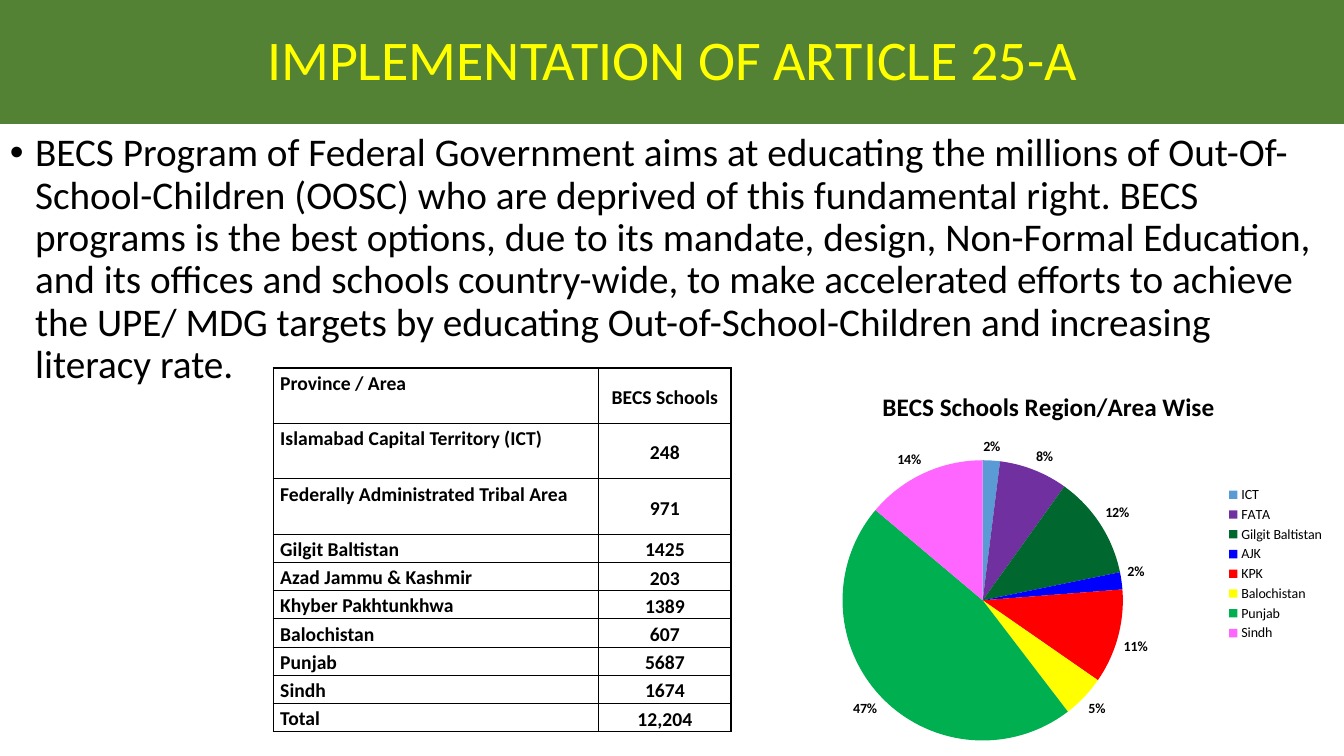
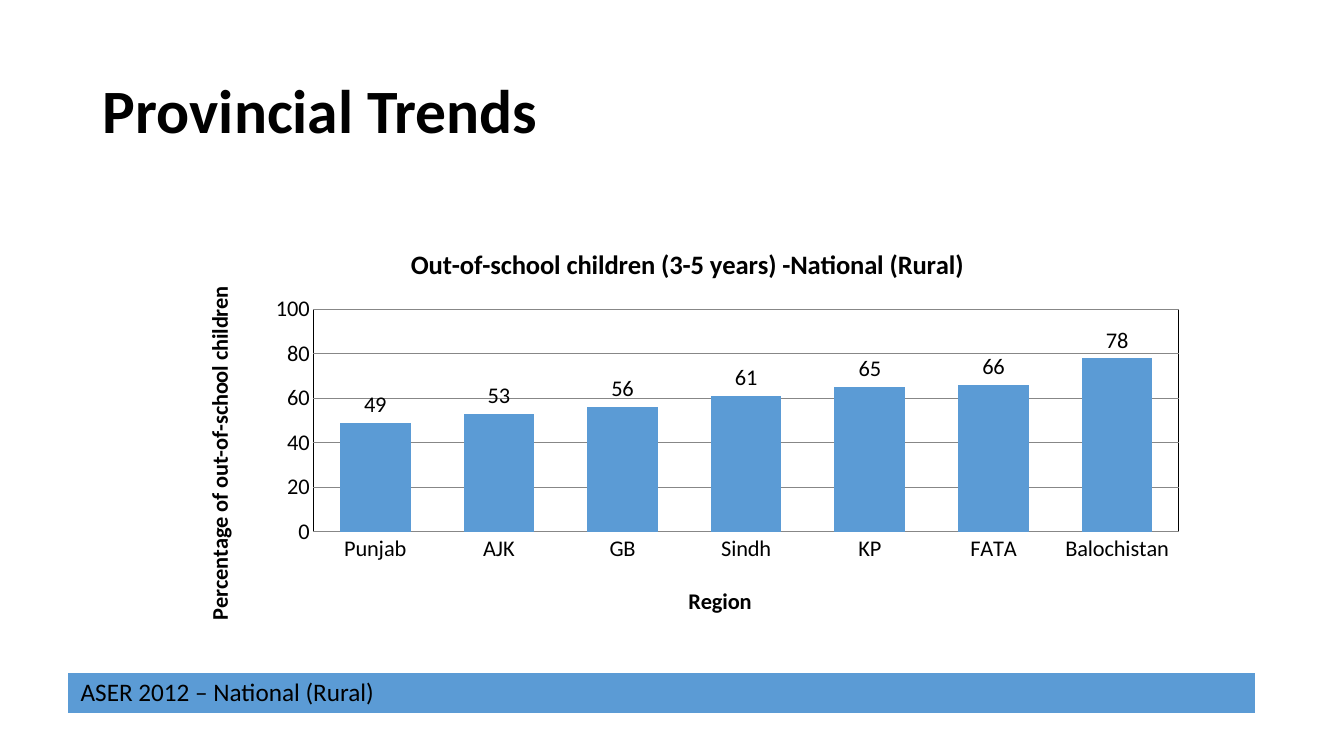
import pptx
import pptx.util
import pptx.chart.data
import pptx.dml.color
import pptx.enum.chart
import pptx.enum.text
import pptx.oxml
import pptx.oxml.ns

PX = 9144  # 100 px to the inch
FONT = "Calibri"
BLACK, BLUE, GREEN, YELLOW, GRAY = "000000", "5B9BD5", "548235", "FFFF00", "878787"
NS = pptx.oxml.ns.nsdecls
QN = pptx.oxml.ns.qn
CHART = pptx.enum.chart
MID = pptx.enum.text.MSO_ANCHOR.MIDDLE
LEFT, MIDST = pptx.enum.text.PP_ALIGN.LEFT, pptx.enum.text.PP_ALIGN.CENTER


def hue(code):
    return pptx.dml.color.RGBColor.from_string(code)


def style(para, size, code=BLACK, bold=False):
    for run in para.runs:
        run.font.name = FONT
        run.font.size = pptx.util.Pt(size)
        run.font.bold = bold
        run.font.color.rgb = hue(code)


deck = pptx.Presentation()
deck.slide_width, deck.slide_height = 1333 * PX, 750 * PX

# Slides and titles
heads = [
    ("IMPLEMENTATION OF ARTICLE 25-A", (0, 0, 1333, 123), 40, YELLOW, False, MIDST),
    ("Provincial Trends", (92, 40, 1150, 145), 44, BLACK, True, LEFT),
]
pages = []
for text, box, size, code, bold, align in heads:
    page = deck.slides.add_slide(deck.slide_layouts[5])
    title = page.shapes.title
    title.left, title.top, title.width, title.height = [n * PX for n in box]
    frame = title.text_frame
    frame.text = text
    frame.auto_size = pptx.enum.text.MSO_AUTO_SIZE.NONE
    frame.vertical_anchor = MID
    para = frame.paragraphs[0]
    para.alignment, para.line_spacing = align, 0.9
    style(para, size, code, bold)
    pages.append(page)
first, last = pages

# Green band behind the first title
first.shapes.title.fill.solid()
first.shapes.title.fill.fore_color.rgb = hue(GREEN)

# Bullet text
body = first.shapes.add_textbox(0, 127 * PX, 1323 * PX, 623 * PX).text_frame
body.word_wrap = True
body.text = (
    "BECS Program of Federal Government aims at educating the millions of "
    "Out-Of-School-Children (OOSC) who are deprived of this fundamental right. "
    "BECS programs is the best options, due to its mandate, design, Non-Formal "
    "Education, and its offices and schools country-wide, to make accelerated "
    "efforts to achieve the UPE/ MDG targets by educating Out-of-School-Children "
    "and increasing literacy rate."
)
para = body.paragraphs[0]
para.line_spacing, para.space_before = 0.9, pptx.util.Pt(10)
style(para, 28)
props = para._p.get_or_add_pPr()
props.set("marL", str(25 * PX))
props.set("indent", str(-25 * PX))
props.append(pptx.oxml.parse_xml(f'<a:buFont {NS("a")} typeface="Arial"/>'))
props.append(pptx.oxml.parse_xml(f'<a:buChar {NS("a")} char="•"/>'))

# Table of schools
rows = [
    ("Province / Area", "BECS Schools"),
    ("Islamabad Capital Territory (ICT)", "248"),
    ("Federally Administrated Tribal Area", "971"),
    ("Gilgit Baltistan", "1425"),
    ("Azad Jammu & Kashmir", "203"),
    ("Khyber Pakhtunkhwa", "1389"),
    ("Balochistan", "607"),
    ("Punjab", "5687"),
    ("Sindh", "1674"),
    ("Total", "12,204"),
]
grid = first.shapes.add_table(len(rows), 2, 271 * PX, 365 * PX, 454 * PX, 360 * PX).table
grid.first_row = grid.horz_banding = False
grid.columns[0].width, grid.columns[1].width = 323 * PX, 131 * PX
for r, row in enumerate(rows):
    grid.rows[r].height = (55 if r < 3 else 28) * PX
    for c, text in enumerate(row):
        cell = grid.cell(r, c)
        cell.text_frame.text = text
        cell.margin_left = cell.margin_right = 7 * PX
        cell.margin_top = cell.margin_bottom = 0
        para = cell.text_frame.paragraphs[0]
        para.line_spacing = 1.15
        style(para, 14, bold=True)
        if c:
            cell.vertical_anchor, para.alignment = MID, MIDST
        for side in "LRTB":
            cell._tc.get_or_add_tcPr().append(pptx.oxml.parse_xml(
                f'<a:ln{side} {NS("a")} w="12700"><a:solidFill>'
                f'<a:srgbClr val="{BLACK}"/></a:solidFill></a:ln{side}>'))
        cell.fill.background()

# Both charts
specs = [
    (first, CHART.XL_CHART_TYPE.PIE, (756, 369, 568, 381), 10,
     "BECS Schools Region/Area Wise", 18,
     ["ICT", "FATA", "Gilgit Baltistan", "AJK", "KPK", "Balochistan", "Punjab", "Sindh"],
     [2, 8, 12, 2, 11, 5, 47, 14]),
    (last, CHART.XL_CHART_TYPE.COLUMN_CLUSTERED, (178, 217, 1022, 450), 16,
     "Out-of-school children (3-5 years) -National (Rural)", 19,
     ["Punjab", "AJK", "GB", "Sindh", "KP", "FATA", "Balochistan"],
     [49, 53, 56, 61, 65, 66, 78]),
]
charts = []
for page, kind, box, size, text, big, cats, vals in specs:
    data = pptx.chart.data.CategoryChartData()
    data.categories = cats
    data.add_series("Series 1", vals)
    chart = page.shapes.add_chart(kind, *[n * PX for n in box], data).chart
    chart.font.name, chart.font.size = FONT, pptx.util.Pt(size)
    chart.font.color.rgb = hue(BLACK)
    chart.has_legend = False
    chart.has_title = True
    chart.chart_title.text_frame.text = text
    style(chart.chart_title.text_frame.paragraphs[0], big, bold=True)
    plot = chart.plots[0]
    plot.has_data_labels = True
    plot.data_labels.position = CHART.XL_LABEL_POSITION.OUTSIDE_END
    plot.data_labels.font.size = pptx.util.Pt(size)
    charts.append(chart)
pie, bars = charts

# Pie slices, labels and legend
plot = pie.plots[0]
plot.vary_by_categories = True
tints = [BLUE, "7030A0", "00682F", "0000FF", "FF0000", YELLOW, "00B050", "FF66FF"]
for i, tint in enumerate(tints):
    fill = plot.series[0].points[i].format.fill
    fill.solid()
    fill.fore_color.rgb = hue(tint)
tags = plot.data_labels
tags.show_percentage, tags.show_value = True, False
tags.number_format, tags.number_format_is_linked = "0%", False
tags.font.bold = True
pie.has_legend = True
pie.legend.position = CHART.XL_LEGEND_POSITION.RIGHT
pie.legend.include_in_layout = False

# Bars and axes
plot = bars.plots[0]
plot.vary_by_categories = False
plot.gap_width, plot.overlap = 75, -25
fill = plot.series[0].format.fill
fill.solid()
fill.fore_color.rgb = hue(BLUE)
tags = plot.data_labels
tags.show_value = True
tags.number_format, tags.number_format_is_linked = "#,##0", False
low, side = bars.category_axis, bars.value_axis
for axis, text in [(low, "Region"), (side, "Percentage of out-of-school children")]:
    axis.axis_title.text_frame.text = text
    style(axis.axis_title.text_frame.paragraphs[0], 16, bold=True)
    axis.major_tick_mark = axis.minor_tick_mark = CHART.XL_TICK_MARK.NONE
low.format.line.color.rgb = hue(GRAY)
side.format.line.fill.background()
side.minimum_scale, side.maximum_scale, side.major_unit = 0, 100, 20
side.major_gridlines.format.line.color.rgb = hue(GRAY)
turn = side.axis_title.text_frame._txBody.bodyPr
turn.set("rot", "-5400000")
turn.set("vert", "horz")

# Black frame around the bars
area = bars._chartSpace.chart.plotArea
area.append(pptx.oxml.parse_xml(
    f'<c:spPr {NS("c", "a")}><a:noFill/><a:ln w="9525"><a:solidFill>'
    f'<a:srgbClr val="{BLACK}"/></a:solidFill></a:ln></c:spPr>'))

# Places of plots and titles, as shares of the chart
spots = [
    (pie._chartSpace.chart.plotArea, dict(x=0.14, y=0.23, w=0.49, h=0.73)),
    (area, dict(x=0.13, y=0.2, w=0.84, h=0.49)),
    (bars.chart_title._element, dict(x=0.22, y=0.05)),
    (low.axis_title._element, dict(x=0.49, y=0.8)),
    (side.axis_title._element, dict(x=0.02, y=0.14)),
]
for part, spot in spots:
    old = part.find(QN("c:layout"))
    if old is not None:
        part.remove(old)
    inner = '<c:layoutTarget val="inner"/>' if "w" in spot else ""
    modes = "".join(f'<c:{k}Mode val="edge"/>' for k in "xy")
    sizes = "".join(f'<c:{k} val="{v}"/>' for k, v in spot.items())
    new = pptx.oxml.parse_xml(
        f'<c:layout {NS("c")}><c:manualLayout>{inner}{modes}{sizes}'
        "</c:manualLayout></c:layout>")
    part.insert(0 if inner else 1, new)

# Source strip
strip = last.shapes.add_table(1, 1, 67 * PX, 667 * PX, 1178 * PX, 41 * PX).table
strip.first_row = strip.horz_banding = False
cell = strip.cell(0, 0)
cell.text_frame.text = "ASER 2012 – National (Rural)"
cell.margin_left = cell.margin_right = 13 * PX
cell.margin_top = cell.margin_bottom = 5 * PX
style(cell.text_frame.paragraphs[0], 18)
cell.fill.solid()
cell.fill.fore_color.rgb = hue(BLUE)

deck.save("out.pptx")
